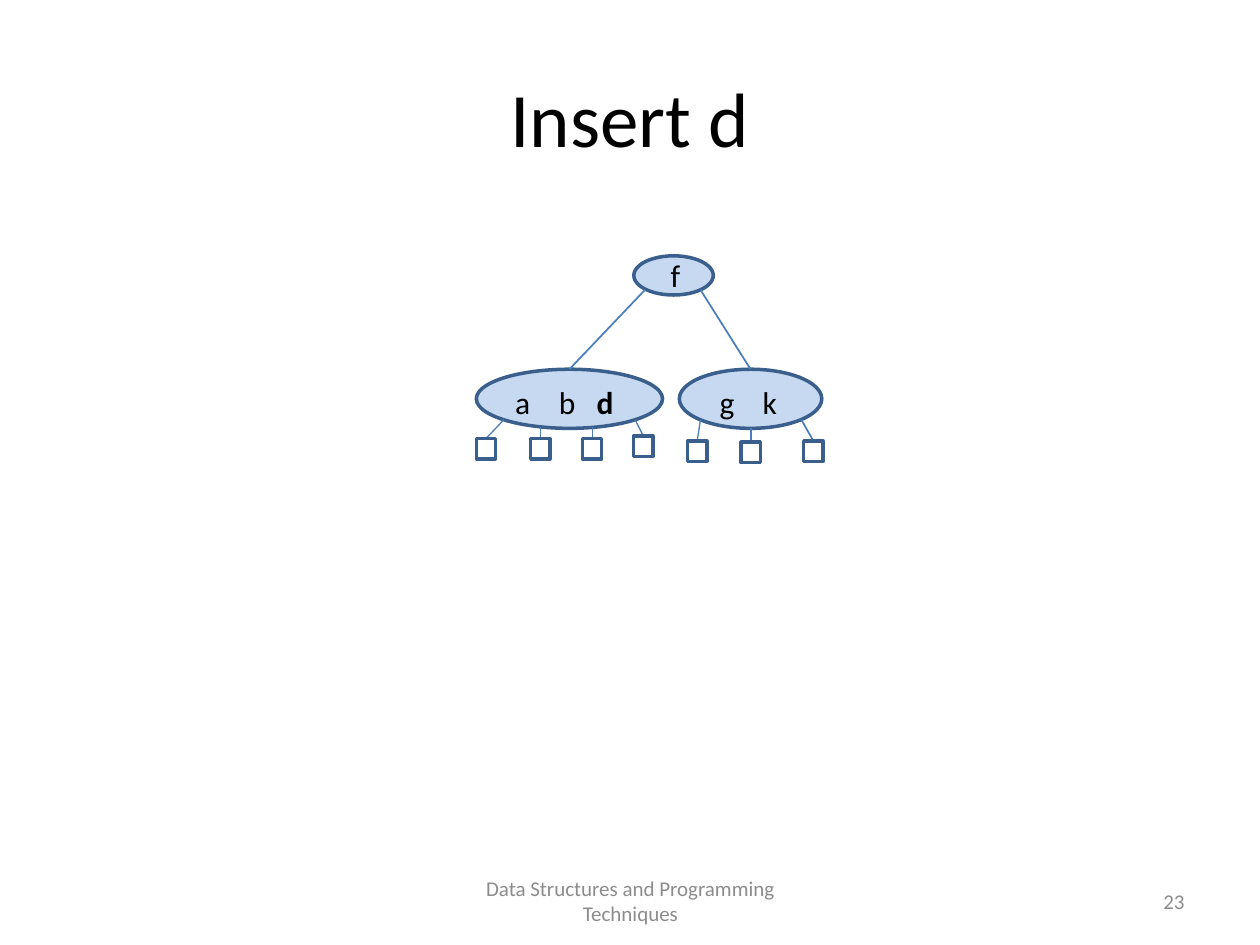
from lxml import etree
from pptx import Presentation
from pptx.dml.color import RGBColor
from pptx.enum import shapes, text
from pptx.oxml import ns
from pptx.util import Pt

FONT, BLACK, GREY = "Calibri", "000000", "8C8C8C"
FILL, OUTLINE, EDGE = "C6D9F1", "3A5F8C", "4B7EBC"
LEAF_W, LEAF_H = 11, 11.7

TITLE = "Insert d"
# text, box, alignment
FOOTERS = [
    ("Data Structures and Programming Techniques", (246.2, 500.4, 228.2, 28.8), "CENTER"),
    ("23", (516.2, 500.4, 167.8, 28.8), "RIGHT"),
]
# Keys are (letter, bold); stops are distances from the first key.
# Leaves are (edge start, top centre of the leaf, edge width).
NODES = [
    {"oval": (362.2, 146.2, 45.4, 22.4), "keys": [("f", False)],
     "label": (366.5, 142.6, 38.9, 28.8), "inset": 7.2, "stops": [], "leaves": []},
    {"oval": (272.2, 211, 106.4, 33.8),
     "keys": [("a", False), ("b", False), ("d", True)],
     "label": (284.4, 215.3, 78.5, 28.8), "inset": 10, "stops": [25, 46.5],
     "leaves": [((288, 239.8), (277.7, 250.6), 0.75),
                ((308.8, 244), (308.8, 250.6), 0.75),
                ((338.4, 244), (338.4, 250.6), 0.75),
                ((362.9, 239.8), (367.6, 249.1), 0.75)]},
    {"oval": (388.2, 211, 81.4, 33.8), "keys": [("g", False), ("k", False)],
     "label": (395.3, 215.3, 66.2, 28.8), "inset": 16, "stops": [24.5],
     "leaves": [((400.3, 239.8), (398.4, 252), 0.75),
                ((429, 244.8), (429, 252.7), 1),
                ((457.9, 239.8), (464.8, 252), 1)]},
]
ROOT_EDGE_STARTS = [(368.6, 165.6), (400.3, 165.6)]


def rgb(value):
    return RGBColor.from_string(value)


def pts(values):
    return [Pt(v) for v in values]


def add_run(p, words, size, color, bold=False):
    r = p.add_run()
    r.text = words
    for name, value in {"name": FONT, "size": Pt(size), "bold": bold}.items():
        setattr(r.font, name, value)
    r.font.color.rgb = rgb(color)


def add_text(s, box, align, anchor="TOP", inset=7.2):
    """Add an empty text box and return its first paragraph."""
    tf = s.shapes.add_textbox(*pts(box)).text_frame
    settings = {"word_wrap": True, "margin_left": Pt(inset),
                "vertical_anchor": getattr(text.MSO_ANCHOR, anchor)}
    for name, value in settings.items():
        setattr(tf, name, value)
    p = tf.paragraphs[0]
    p.alignment = getattr(text.PP_ALIGN, align)
    return p


def add_outline(s, kind, box, fill=None):
    sp = s.shapes.add_shape(kind, *pts(box))
    sp.shadow.inherit = False
    if fill:
        sp.fill.solid()
        sp.fill.fore_color.rgb = rgb(fill)
    else:
        sp.fill.background()
    sp.line.color.rgb = rgb(OUTLINE)
    sp.line.width = Pt(2)


def add_edge(s, start, end, width=1):
    line = s.shapes.add_connector(shapes.MSO_CONNECTOR.STRAIGHT, *pts(start + end))
    line.line.color.rgb = rgb(EDGE)
    line.line.width = Pt(width)
    etree.SubElement(line._element.spPr, ns.qn("a:effectLst"))


def add_keys(s, node):
    align = "LEFT" if node["stops"] else "CENTER"
    p = add_text(s, node["label"], align, inset=node["inset"])
    if node["stops"]:
        tabs = etree.SubElement(p._p.get_or_add_pPr(), ns.qn("a:tabLst"))
        for stop in node["stops"]:
            etree.SubElement(tabs, ns.qn("a:tab"), pos=str(Pt(stop)), algn="l")
    for i, (key, bold) in enumerate(node["keys"]):
        add_run(p, "\t" + key if i else key, 18, BLACK, bold)


def add_node(s, node):
    add_outline(s, shapes.MSO_SHAPE.OVAL, node["oval"], FILL)
    for start, top, width in node["leaves"]:
        add_edge(s, start, top, width)
        box = (top[0] - LEAF_W / 2, top[1], LEAF_W, LEAF_H)
        add_outline(s, shapes.MSO_SHAPE.RECTANGLE, box)
    add_keys(s, node)


def main():
    prs = Presentation()
    prs.slide_width, prs.slide_height = Pt(720), Pt(540)
    s = prs.slides.add_slide(prs.slide_layouts[5])

    title = s.shapes.title
    title.left, title.top, title.width, title.height = pts((36, 21.6, 648, 90))
    title.text_frame.vertical_anchor = text.MSO_ANCHOR.MIDDLE
    p = title.text_frame.paragraphs[0]
    p.alignment = text.PP_ALIGN.CENTER
    add_run(p, TITLE, 44, BLACK)

    for words, box, align in FOOTERS:
        add_run(add_text(s, box, align, "MIDDLE"), words, 12, GREY)

    for node in NODES:
        add_node(s, node)
    for start, child in zip(ROOT_EDGE_STARTS, NODES[1:]):
        x, y, w, _ = child["oval"]
        add_edge(s, start, (x + w / 2, y))

    prs.save("out.pptx")


if __name__ == "__main__":
    main()
